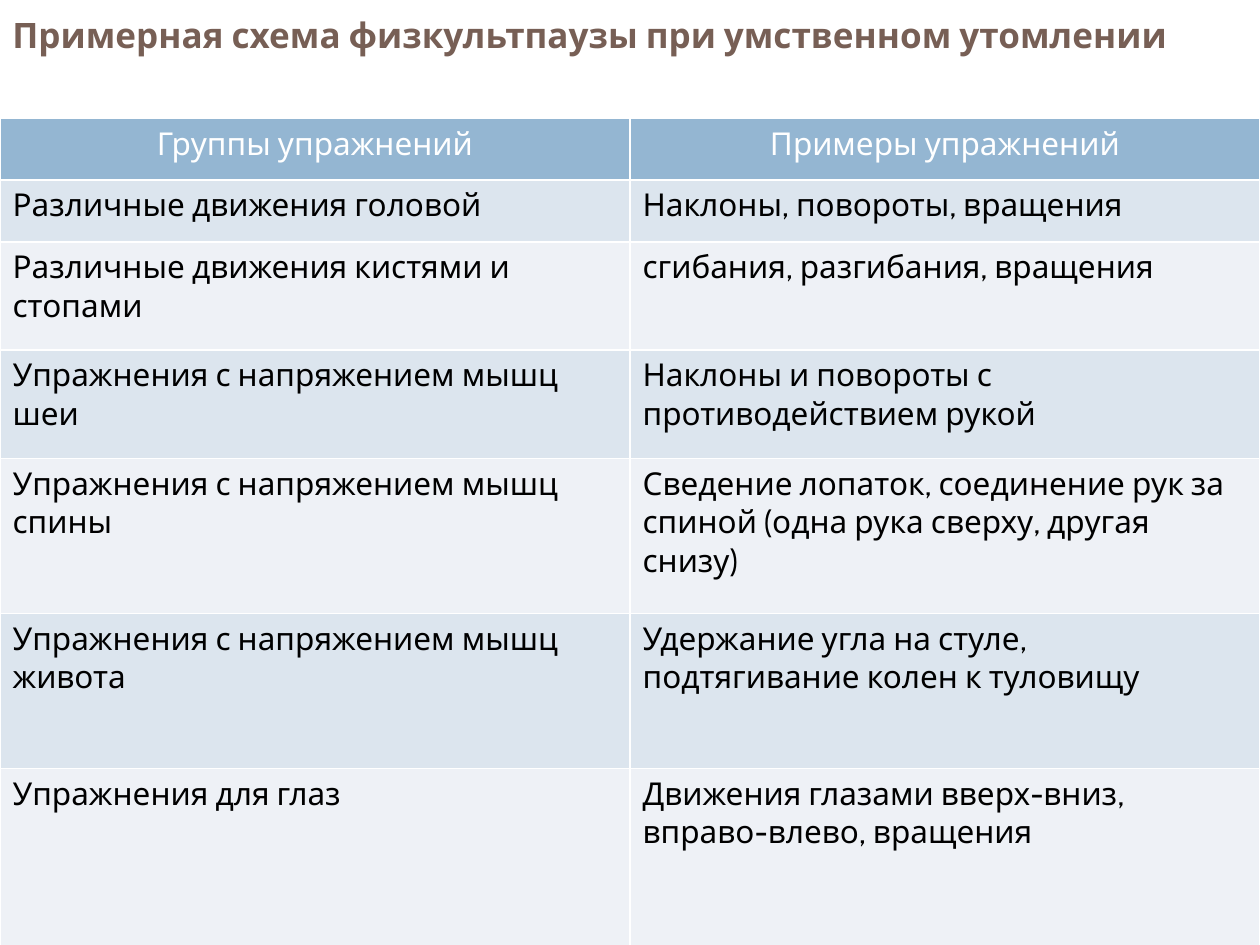
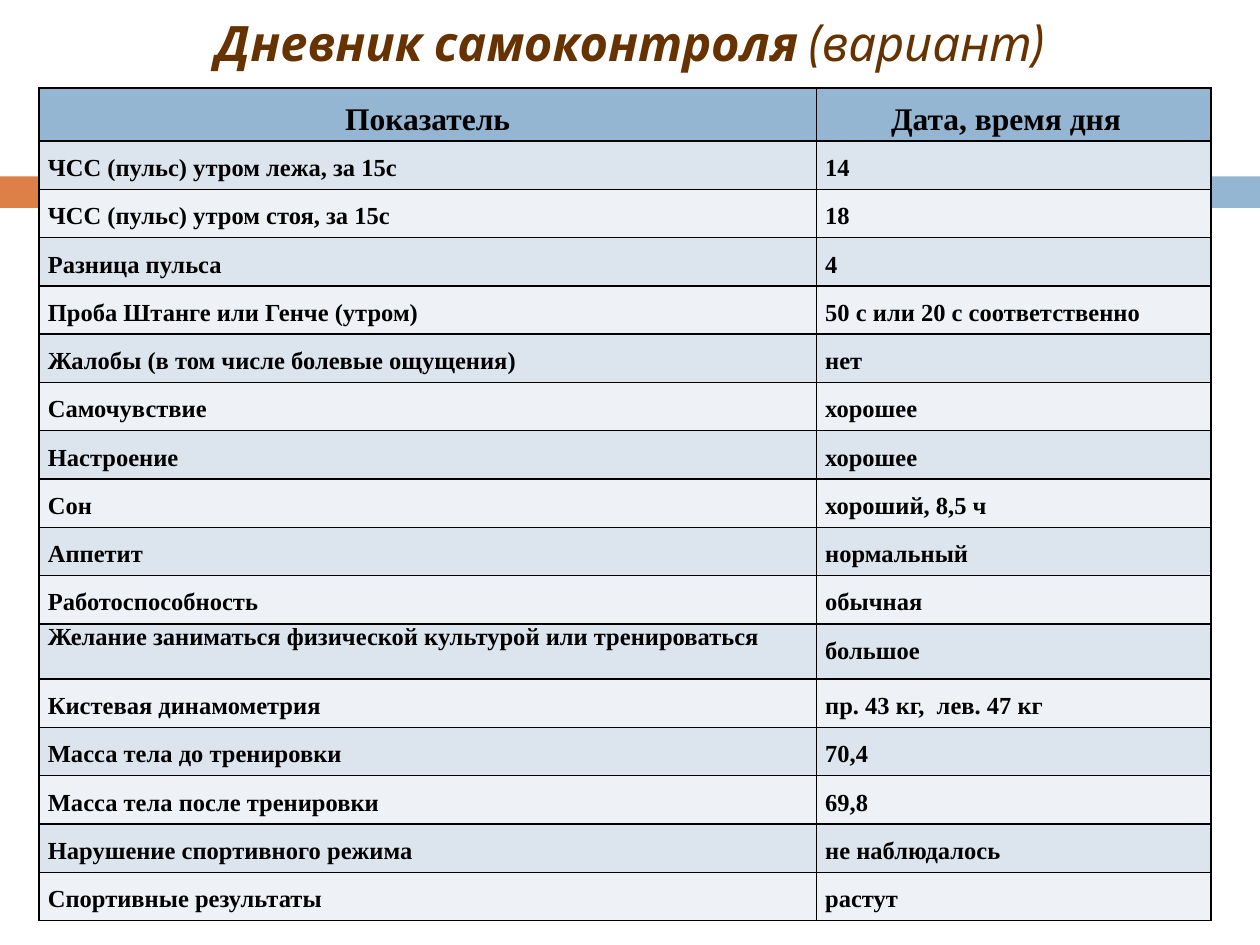
"""Two slides with tables: an exercise break scheme and a self-control diary."""
import lxml.etree
import pptx
import pptx.dml.color
import pptx.enum.shapes
import pptx.enum.text
import pptx.oxml.ns
import pptx.util

Inches = pptx.util.Inches
Pt = pptx.util.Pt
RGBColor = pptx.dml.color.RGBColor
Align = pptx.enum.text.PP_ALIGN

WHITE = RGBColor(0xFF, 0xFF, 0xFF)
BLACK = RGBColor(0x00, 0x00, 0x00)
BLUE = RGBColor(0x94, 0xB6, 0xD2)
ORANGE = RGBColor(0xDD, 0x80, 0x47)
DARK_ROW = RGBColor(0xDC, 0xE5, 0xEE)
LIGHT_ROW = RGBColor(0xEE, 0xF1, 0xF6)
TAUPE = RGBColor(0x77, 0x5F, 0x55)
BROWN = RGBColor(0x66, 0x33, 0x00)

TITLE_FONT = "Cabin"
DIARY_FONT = "Times New Roman"

EXERCISES = [
    ("Группы упражнений", "Примеры упражнений"),
    ("Различные движения головой", "Наклоны, повороты, вращения"),
    ("Различные движения кистями и стопами", "сгибания, разгибания, вращения"),
    ("Упражнения с напряжением мышц шеи", "Наклоны и повороты с противодействием рукой"),
    ("Упражнения с напряжением мышц спины",
     "Сведение лопаток, соединение рук за спиной (одна рука сверху, другая снизу)"),
    ("Упражнения с напряжением мышц живота",
     "Удержание угла на стуле, подтягивание колен к туловищу"),
    ("Упражнения для глаз", "Движения глазами вверх-вниз, вправо-влево, вращения"),
]
EXERCISE_HEIGHTS = [0.49, 0.49, 0.86, 0.86, 1.23, 1.23, 1.6]

DESIRE = "Желание заниматься физической культурой или тренироваться"
DIARY = [
    ("Показатель", "Дата, время дня"),
    ("ЧСС (пульс) утром лежа, за 15с", "14"),
    ("ЧСС (пульс) утром стоя, за 15с", "18"),
    ("Разница пульса", "4"),
    ("Проба Штанге или Генче (утром)", "50 с или 20 с соответственно"),
    ("Жалобы (в том числе болевые ощущения)", "нет"),
    ("Самочувствие", "хорошее"),
    ("Настроение", "хорошее"),
    ("Сон", "хороший, 8,5 ч"),
    ("Аппетит", "нормальный"),
    ("Работоспособность", "обычная"),
    (DESIRE, "большое"),
    ("Кистевая динамометрия", "пр. 43 кг,  лев. 47 кг"),
    ("Масса тела до тренировки", "70,4"),
    ("Масса тела после тренировки", "69,8"),
    ("Нарушение спортивного режима", "не наблюдалось"),
    ("Спортивные результаты", "растут"),
]


def style_span(span, font, size, color, bold=False, italic=False):
    """Set the font of one run."""
    span.font.name = font
    span.font.size = Pt(size)
    span.font.color.rgb = color
    span.font.bold = bold
    span.font.italic = italic


def add_title(page, box, parts, size, color, align=Align.LEFT):
    """Add a one-line title made of (text, bold, italic) parts."""
    frame = page.shapes.add_textbox(*map(Inches, box)).text_frame
    frame.word_wrap = True
    frame.vertical_anchor = pptx.enum.text.MSO_ANCHOR.MIDDLE
    para = frame.paragraphs[0]
    para.alignment = align
    for text, bold, italic in parts:
        span = para.add_run()
        span.text = text
        style_span(span, TITLE_FONT, size, color, bold, italic)


def add_bands(page, top, height):
    """Draw the orange and blue bands across the slide."""
    for left, width, color in ((0, 0.58, ORANGE), (0.65, 9.35, BLUE)):
        band = page.shapes.add_shape(
            pptx.enum.shapes.MSO_SHAPE.RECTANGLE,
            Inches(left), Inches(top), Inches(width), Inches(height))
        band.shadow.inherit = False
        band.fill.solid()
        band.fill.fore_color.rgb = color
        band.line.fill.background()


def set_borders(cell, color):
    """Give a cell a one-point line on every side."""
    qn = pptx.oxml.ns.qn
    properties = cell._tc.get_or_add_tcPr()
    for side in ("a:lnL", "a:lnR", "a:lnT", "a:lnB"):
        line = lxml.etree.SubElement(properties, qn(side), w=str(Pt(1)))
        fill = lxml.etree.SubElement(line, qn("a:solidFill"))
        lxml.etree.SubElement(fill, qn("a:srgbClr"), val=str(color))


def add_grid(page, left, top, widths, heights, rows, border):
    """Add a table with a blue header and alternating rows."""
    table = page.shapes.add_table(
        len(rows), len(widths), Inches(left), Inches(top),
        Inches(sum(widths)), Inches(sum(heights))).table
    for column, width in zip(table.columns, widths):
        column.width = Inches(width)
    for number, (texts, height) in enumerate(zip(rows, heights)):
        table.rows[number].height = Inches(height)
        fill = BLUE if number == 0 else (LIGHT_ROW, DARK_ROW)[number % 2]
        for cell, text in zip(table.rows[number].cells, texts):
            set_borders(cell, border)
            cell.fill.solid()
            cell.fill.fore_color.rgb = fill
            para = cell.text_frame.paragraphs[0]
            para.text = text
            para.alignment = Align.LEFT if number else Align.CENTER
    return table


def build_exercises(page):
    """Build the slide with the exercise break scheme."""
    add_title(page, (0, -0.31, 10, 1.17),
              [("Примерная схема физкультпаузы при умственном утомлении", True, False)],
              20, TAUPE)
    table = add_grid(page, 0, 0.94, [5, 5], EXERCISE_HEIGHTS, EXERCISES, WHITE)
    for number, row in enumerate(table.rows):
        for cell in row.cells:
            style_span(cell.text_frame.paragraphs[0].runs[0], TITLE_FONT, 18,
                       BLACK if number else WHITE)


def build_diary(page):
    """Build the slide with the self-control diary."""
    add_title(page, (0, 0, 10, 0.67),
              [("Дневник самоконтроля ", True, True), ("(вариант)", False, True)],
              27.9, BROWN, Align.CENTER)
    total, header, tall = 6.61, 0.42, 0.44
    regular = (total - header - tall) / (len(DIARY) - 2)
    heights = [header] + [tall if name == DESIRE else regular for name, _ in DIARY[1:]]
    table = add_grid(page, 0.31, 0.7, [6.17, 3.13], heights, DIARY, BLACK)
    for number, row in enumerate(table.rows):
        for cell in row.cells:
            cell.margin_left = cell.margin_right = Inches(0.07)
            cell.margin_top = cell.margin_bottom = 0
            para = cell.text_frame.paragraphs[0]
            para.line_spacing = 1.0 if para.text == DESIRE else 1.5 if number else 1.4
            style_span(para.runs[0], DIARY_FONT, 14 if number else 18, BLACK, True)
    table.cell(0, 1).margin_right = Inches(0.19)


def main():
    """Build and save the deck."""
    deck = pptx.Presentation()
    deck.slide_width = Inches(10)
    deck.slide_height = Inches(7.5)
    for build in (build_exercises, build_diary):
        page = deck.slides.add_slide(deck.slide_layouts[6])
        add_bands(page, 1.4, 0.25)
        build(page)
    deck.save("out.pptx")


if __name__ == "__main__":
    main()
